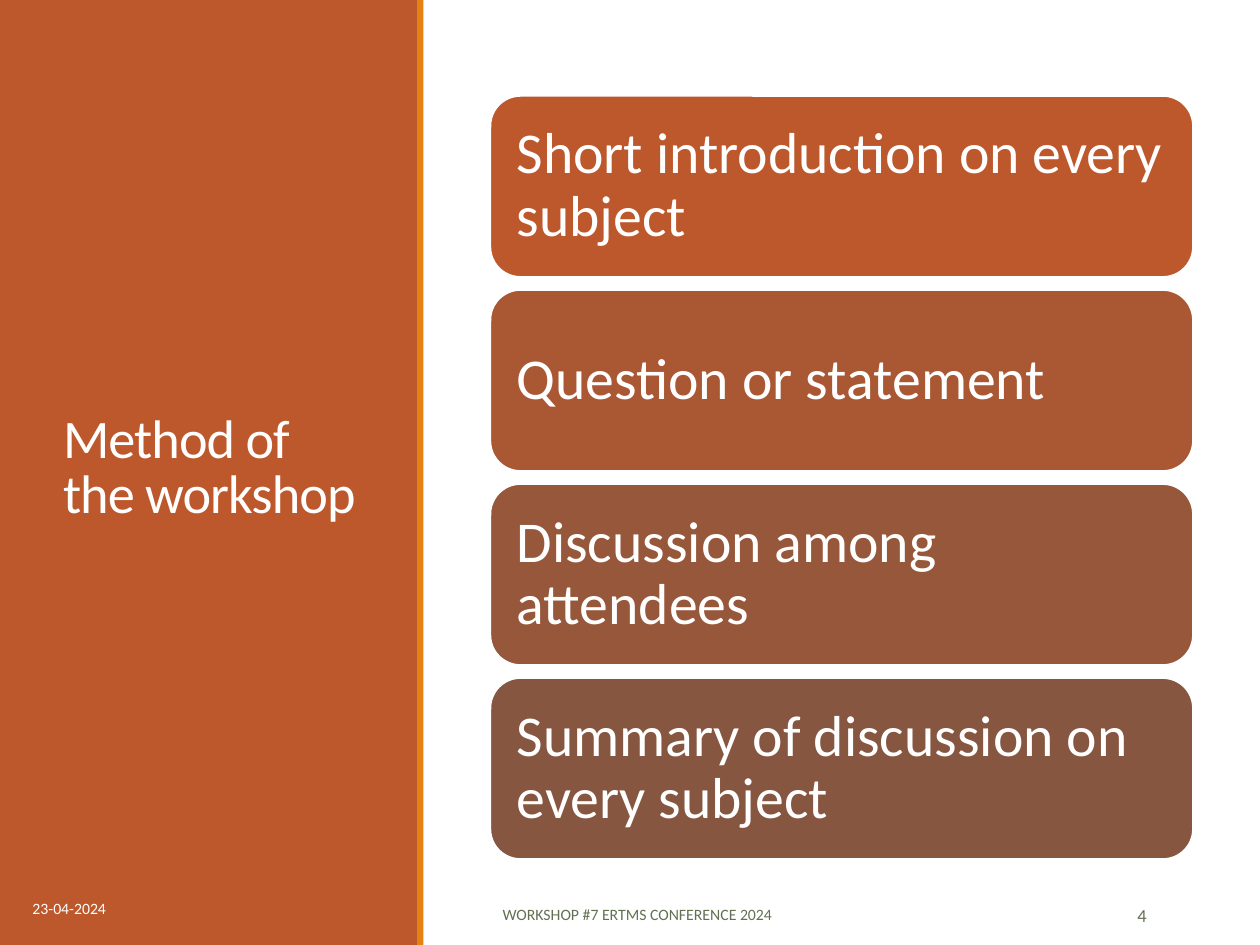
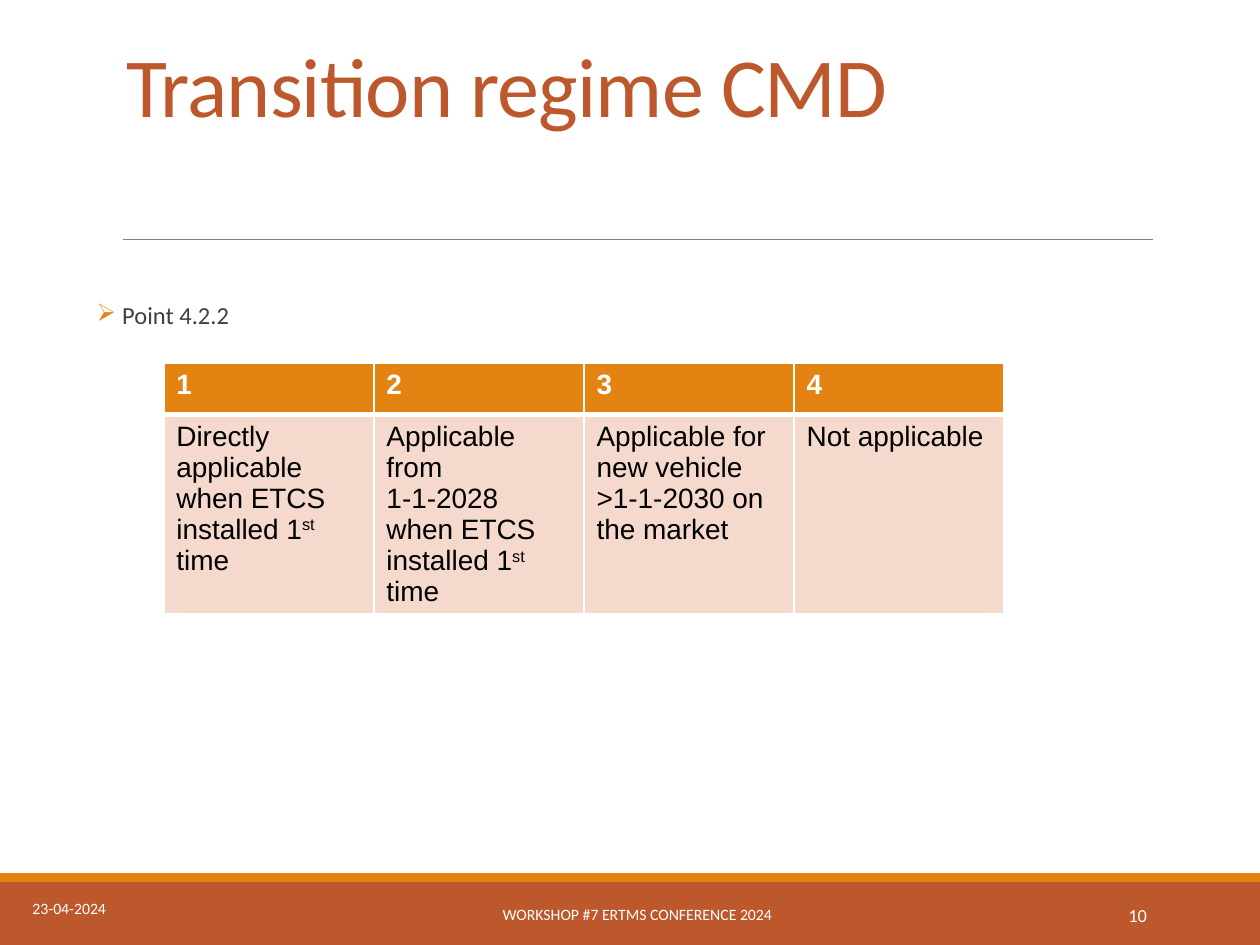
from lxml.etree import SubElement
from pptx import Presentation
from pptx.dml.color import RGBColor
from pptx.enum.shapes import MSO_CONNECTOR, MSO_SHAPE
from pptx.enum.text import MSO_ANCHOR as ANCHOR, MSO_AUTO_SIZE, PP_ALIGN as ALIGN
from pptx.oxml.ns import qn
from pptx.util import Inches, Pt

COLORS = {
    "rust": "BD582C",
    "orange": "E48312",
    "white": "FFFFFF",
    "olive": "637052",
    "gray": "808080",
    "text": "404040",
    "black": "000000",
    "peach": "F5D9CC",
    "card1": "BD582C",
    "card2": "AA5834",
    "card3": "97573A",
    "card4": "865640",
}
HEADING_FONT = "Calibri"
TABLE_FONT = "Arial"
DATE = "23-04-2024"
FOOTER = "WORKSHOP #7 ERTMS CONFERENCE 2024"
SUPERSCRIPT = "^"  # marks a run that is raised

STEPS = [
    "Short introduction on every subject",
    "Question or statement",
    "Discussion among attendees",
    "Summary of discussion on every subject",
]
# Each cell is a list of paragraphs, each paragraph a list of runs.
REGIMES = [
    ("1", [["Directly applicable when ETCS installed 1", "^st", " time"]]),
    ("2", [["Applicable from \n1-1-2028 when ETCS installed 1", "^st", " time"]]),
    ("3", [["Applicable for new vehicle"], [">1-1-2030 on the market"]]),
    ("4", [["Not applicable"]]),
]


def rgb(color):
    return RGBColor.from_string(COLORS[color])


def inches(*lengths):
    return [Inches(length) for length in lengths]


class Deck:
    def __init__(self):
        self.presentation = Presentation()
        self.presentation.slide_width = Inches(10)
        self.presentation.slide_height = Inches(7.5)
        self.slide = None

    def new_slide(self):
        layout = self.presentation.slide_layouts.get_by_name("Title Only")
        self.slide = self.presentation.slides.add_slide(layout)

    def add_runs(self, paragraph, runs, size, color, font=HEADING_FONT,
                 bold=False, tracking=None):
        for text in runs:
            for index, line in enumerate(text.split("\n")):
                if index:
                    paragraph.add_line_break()
                run = paragraph.add_run()
                run.text = line.lstrip(SUPERSCRIPT)
                run.font.size = Pt(size)
                run.font.name = font
                run.font.bold = bold
                run.font.color.rgb = rgb(color)
                properties = run._r.get_or_add_rPr()
                if line.startswith(SUPERSCRIPT):
                    properties.set("baseline", "30000")
                if tracking:
                    properties.set("spc", str(int(tracking * 100)))

    def prepare_frame(self, shape, anchor, margins=(0.1, 0.05, 0.1, 0.05)):
        frame = shape.text_frame
        frame.word_wrap = True
        frame.auto_size = MSO_AUTO_SIZE.NONE
        frame.vertical_anchor = anchor
        (frame.margin_left, frame.margin_top,
         frame.margin_right, frame.margin_bottom) = inches(*margins)
        return frame.paragraphs[0]

    def title(self, text, box, size, color, anchor, top_margin=0.05):
        title = self.slide.shapes.title
        title.left, title.top, title.width, title.height = inches(*box)
        paragraph = self.prepare_frame(title, anchor, (0.1, top_margin, 0.1, 0.05))
        paragraph.alignment = ALIGN.LEFT
        paragraph.line_spacing = 0.85
        self.add_runs(paragraph, [text], size, color, tracking=-0.5)
        self.slide.shapes._spTree.append(title._element)  # bring to front

    def block(self, box, fill, kind=MSO_SHAPE.RECTANGLE):
        shape = self.slide.shapes.add_shape(kind, *inches(*box))
        shape.shadow.inherit = False
        shape.fill.solid()
        shape.fill.fore_color.rgb = rgb(fill)
        shape.line.fill.background()
        return shape

    def card(self, text, box, fill):
        card = self.block(box, fill, MSO_SHAPE.ROUNDED_RECTANGLE)
        card.line.color.rgb = rgb("white")
        card.line.width = Pt(1.25)
        paragraph = self.prepare_frame(card, ANCHOR.MIDDLE, [0.14] * 4)
        paragraph.alignment = ALIGN.LEFT
        paragraph.line_spacing = 0.9
        self.add_runs(paragraph, [text], 33, "white")

    def text(self, text, box, size, color, align=ALIGN.LEFT):
        shape = self.slide.shapes.add_textbox(*inches(*box))
        paragraph = self.prepare_frame(shape, ANCHOR.MIDDLE)
        paragraph.alignment = align
        self.add_runs(paragraph, [text], size, color)
        return paragraph

    def footer(self, number, color, number_left):
        self.text(DATE, (0.16, 7.01, 2.03, 0.4), 9, "white")
        label = self.text(FOOTER, (3.89, 7.06, 4.19, 0.4), 9, color)
        label.space_after = Pt(6)
        number_box = (number_left, 7.06, 9.2 - number_left, 0.4)
        self.text(str(number), number_box, 10.5, color, ALIGN.RIGHT)

    def rule(self, left, right, top):
        line = self.slide.shapes.add_connector(
            MSO_CONNECTOR.STRAIGHT, *inches(left, top, right, top))
        line.line.color.rgb = rgb("gray")
        line.line.width = Pt(0.5)
        SubElement(line._element.spPr, qn("a:effectLst"))

    def bullet(self, text, box):
        shape = self.slide.shapes.add_textbox(*inches(*box))
        paragraph = self.prepare_frame(shape, ANCHOR.TOP, (0, 0.05, 0, 0.05))
        paragraph.line_spacing = 0.9
        paragraph.space_before = Pt(2)
        paragraph.space_after = Pt(4)
        properties = paragraph._p.get_or_add_pPr()
        properties.set("marL", str(Inches(0.62)))
        properties.set("indent", str(Inches(-0.2)))
        bullet_color = SubElement(properties, qn("a:buClr"))
        SubElement(bullet_color, qn("a:srgbClr"), val=COLORS["orange"])
        SubElement(properties, qn("a:buChar"), char="➢")
        self.add_runs(paragraph, [text], 14, "text")

    def cell(self, cell, paragraphs, fill, color, bold, top, bottom):
        """Fill one table cell; top and bottom are border widths in points."""
        properties = cell._tc.get_or_add_tcPr()
        for side, width in (("L", 1), ("R", 1), ("T", top), ("B", bottom)):
            border = SubElement(properties, qn(f"a:ln{side}"), w=str(Pt(width)))
            border_fill = SubElement(border, qn("a:solidFill"))
            SubElement(border_fill, qn("a:srgbClr"), val=COLORS["white"])
        cell.fill.solid()
        cell.fill.fore_color.rgb = rgb(fill)
        frame = cell.text_frame
        for index, runs in enumerate(paragraphs):
            paragraph = frame.add_paragraph() if index else frame.paragraphs[0]
            self.add_runs(paragraph, runs, 16, color, TABLE_FONT, bold)

    def table(self, columns, box, row_heights):
        table = self.slide.shapes.add_table(
            len(row_heights), len(columns), *inches(*box)).table
        table.horz_banding = False
        for row, height in zip(table.rows, row_heights):
            row.height = Inches(height)
        for index, (heading, paragraphs) in enumerate(columns):
            self.cell(table.cell(0, index), [[heading]], "orange", "white", True, 1, 3)
            self.cell(table.cell(1, index), paragraphs, "peach", "black", False, 3, 1)


def build_method_slide(deck):
    deck.new_slide()
    deck.block((0, 0, 3.32, 7.5), "rust")
    deck.block((3.31, 0, 0.05, 7.5), "orange")
    deck.title("Method of the workshop", (0.4, 0.57, 2.53, 6.31), 31, "white",
               ANCHOR.MIDDLE)
    for index, step in enumerate(STEPS):
        deck.card(step, (3.89, 0.76 + 1.54 * index, 5.58, 1.44), f"card{index + 1}")
    deck.footer(4, "olive", number_left=8.3)


def build_transition_slide(deck):
    deck.new_slide()
    deck.block((0, 7, 10, 0.5), "rust")
    deck.block((0, 6.93, 10, 0.07), "orange")
    deck.rule(0.98, 9.15, 1.9)
    deck.title("Transition regime CMD", (0.9, 0.31, 8.25, 1.59), 48, "rust",
               ANCHOR.TOP, top_margin=0.08)
    deck.bullet("Point 4.2.2", (0.35, 2.36, 9.06, 4.09))
    deck.table(REGIMES, (1.3, 2.88, 6.67, 1.22), (0.41, 0.81))
    deck.footer(10, "white", number_left=8.12)


def main():
    deck = Deck()
    build_method_slide(deck)
    build_transition_slide(deck)
    deck.presentation.save("out.pptx")


if __name__ == "__main__":
    main()
